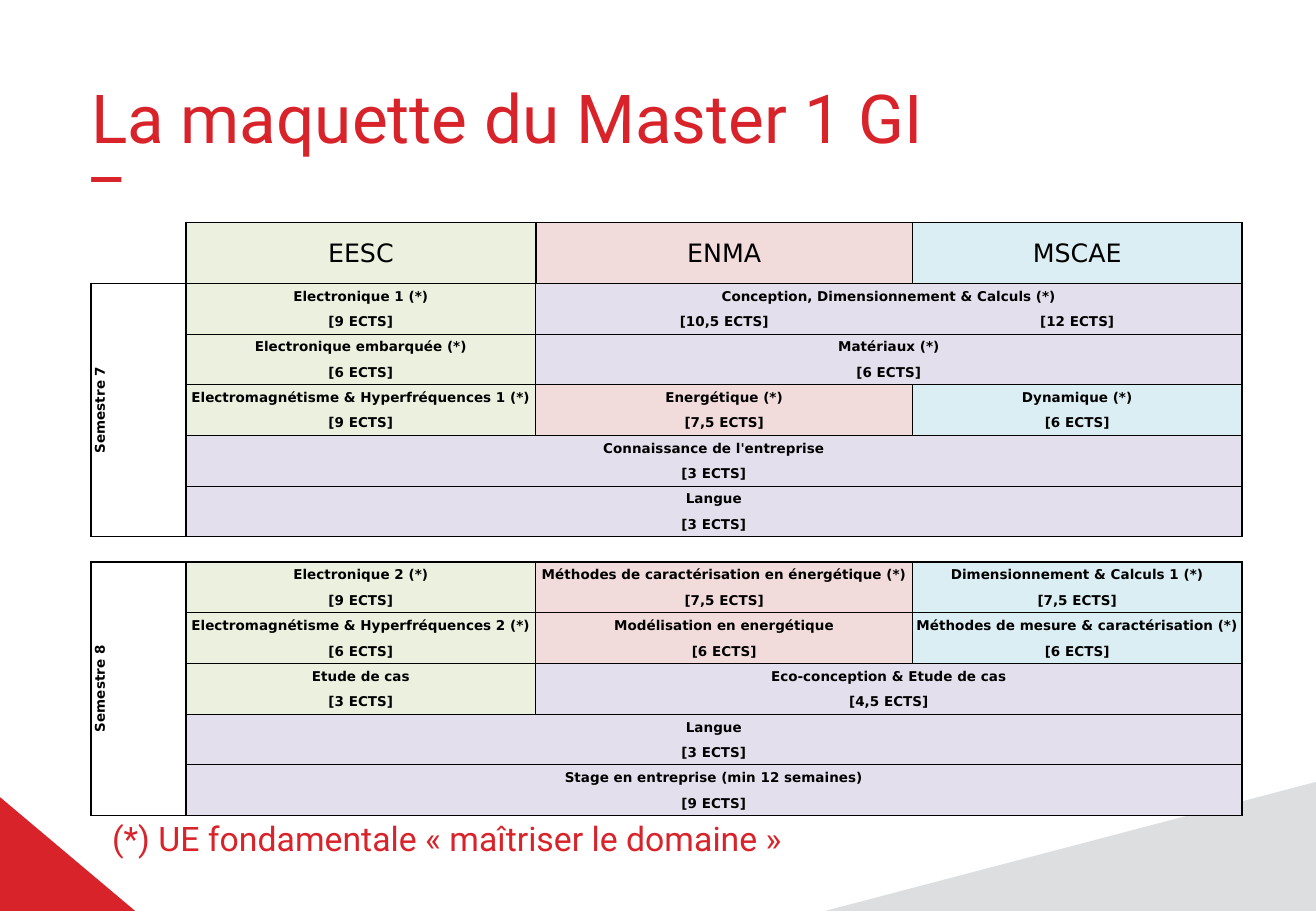
import pptx
import pptx.util
import pptx.dml.color
import pptx.enum.text
import pptx.oxml
import pptx.oxml.ns
import lxml.etree
from collections import defaultdict

Inches, Pt = pptx.util.Inches, pptx.util.Pt
ALIGN = pptx.enum.text.PP_ALIGN
ANCHOR = pptx.enum.text.MSO_ANCHOR

THEME = {
    "red": "D8232A", "grey": "DCDEE0", "black": "000000",
    "columns": {1: "EBF1DE", 2: "F2DCDB", 3: "DAEEF3"}, "shared": "E4DFEC",
    "text_font": "Roboto", "table_font": "DejaVu Sans",
    "title_size": 40, "note_size": 20, "header_size": 15, "cell_size": 8,
    "thick": 1, "thin": 0.5,
}
TITLE = "La maquette du Master 1 GI"
NOTE = "(*) UE fondamentale « maîtriser le domaine »"
TRACKS = ["EESC", "ENMA", "MSCAE"]
SEMESTERS = [
    ("Semestre 7", [
        [("Electronique 1 (*)", ["9"], 1, 1),
         ("Conception, Dimensionnement & Calculs (*)", ["10,5", "12"], 2, 3)],
        [("Electronique embarquée (*)", ["6"], 1, 1), ("Matériaux (*)", ["6"], 2, 3)],
        [("Electromagnétisme & Hyperfréquences 1 (*)", ["9"], 1, 1),
         ("Energétique (*)", ["7,5"], 2, 2), ("Dynamique (*)", ["6"], 3, 3)],
        [("Connaissance de l'entreprise", ["3"], 1, 3)],
        [("Langue", ["3"], 1, 3)],
    ]),
    ("Semestre 8", [
        [("Electronique 2 (*)", ["9"], 1, 1),
         ("Méthodes de caractérisation en énergétique (*)", ["7,5"], 2, 2),
         ("Dimensionnement & Calculs 1 (*)", ["7,5"], 3, 3)],
        [("Electromagnétisme & Hyperfréquences 2 (*)", ["6"], 1, 1),
         ("Modélisation en energétique", ["6"], 2, 2),
         ("Méthodes de mesure & caractérisation (*)", ["6"], 3, 3)],
        [("Etude de cas", ["3"], 1, 1), ("Eco-conception & Etude de cas", ["4,5"], 2, 3)],
        [("Langue", ["3"], 1, 3)],
        [("Stage en entreprise (min 12 semaines)", ["9"], 1, 3)],
    ]),
]
CORNERS = [
    ("red", [(-9.72, 7.54), (1.16, 7.54), (-7.79, 0), (-9.74, 0)]),
    ("grey", [(13.9, 5.63), (2.34, 8.67), (2.3, 9.71), (13.92, 9.71)]),
]
COLUMN_WIDTHS = [0.78, 2.88, 3.1, 2.71]
HEADER_HEIGHTS = [0.25, 0.16]
ROW_COUNT = 23
TABLE_LEFT, TABLE_TOP, TABLE_HEIGHT = 0.75, 1.83, 4.8
STYLE_NO_GRID = "{2D5ABB26-0587-4C30-8999-92F81FD0307C}"


def rgb(value):
    return pptx.dml.color.RGBColor.from_string(value)


def set_all(target, values):
    for name, value in values.items():
        setattr(target, name, value)


def write(p, text, size, font, color, bold=False):
    r = p.add_run()
    r.text = text
    set_all(r.font, {"size": Pt(size), "name": font, "bold": bold})
    r.font.color.rgb = rgb(color)


def set_margins(target, margin, bottom=None):
    set_all(target, {"margin_left": Inches(margin), "margin_right": Inches(margin),
                     "margin_top": Inches(margin),
                     "margin_bottom": Inches(margin if bottom is None else bottom)})


def fill_cell(table, text, top, left, bottom, right, fill=None, size=THEME["cell_size"], bold=True):
    cell = table.cell(top, left)
    if (top, left) != (bottom, right):
        cell.merge(table.cell(bottom, right))
    cell.vertical_anchor = ANCHOR.MIDDLE
    p = cell.text_frame.paragraphs[0]
    p.alignment = ALIGN.CENTER
    write(p, text, size, THEME["table_font"], THEME["black"], bold)
    if fill:
        for row in range(top, bottom + 1):
            for col in range(left, right + 1):
                part = table.cell(row, col)
                part.fill.solid()
                part.fill.fore_color.rgb = rgb(fill)
    return cell


def frame(borders, top, left, bottom, right, width):
    for row in range(top, bottom + 1):
        borders[row, left]["L"] = borders[row, right]["R"] = width
    for col in range(left, right + 1):
        borders[top, col]["T"] = borders[bottom, col]["B"] = width


def draw_borders(table, borders):
    for (row, col), own in list(borders.items()):
        cell = table.cell(row, col)
        sides = dict(own)
        if cell.is_merge_origin:
            far = borders[row + cell.span_height - 1, col + cell.span_width - 1]
            sides.update({side: far[side] for side in "RB" if side in far})
        tc_pr = cell._tc.get_or_add_tcPr()
        for index, side in enumerate("LRTB"):
            width = sides.get(side, 0)
            paint = (f'<a:solidFill><a:srgbClr val="{THEME["black"]}"/></a:solidFill>'
                     if width else "<a:noFill/>")
            tc_pr.insert(index, pptx.oxml.parse_xml(
                f'<a:ln{side} {pptx.oxml.ns.nsdecls("a")} w="{int(Pt(width))}">{paint}</a:ln{side}>'))


def add_corners(s):
    for color, points in CORNERS:
        outline = [(Inches(x), Inches(y)) for x, y in points]
        builder = s.shapes.build_freeform(*outline[0])
        builder.add_line_segments(outline[1:], close=True)
        sp = builder.convert_to_shape()
        sp.shadow.inherit = False
        sp.fill.solid()
        sp.fill.fore_color.rgb = rgb(THEME[color])
        sp.line.fill.background()


def add_title(s):
    sp = s.shapes.title
    set_all(sp, {"left": Inches(0.72), "top": Inches(0.6),
                 "width": Inches(10.11), "height": Inches(1.09)})
    tf = sp.text_frame
    set_margins(tf, 0.03)
    set_all(tf, {"vertical_anchor": ANCHOR.TOP, "word_wrap": True,
                 "auto_size": pptx.enum.text.MSO_AUTO_SIZE.NONE})
    for p, text in ((tf.paragraphs[0], TITLE), (tf.add_paragraph(), "_")):
        set_all(p, {"alignment": ALIGN.LEFT, "space_before": Pt(0), "line_spacing": 1.0})
        write(p, text, THEME["title_size"], THEME["text_font"], THEME["red"])
    tf.paragraphs[1].line_spacing = Pt(19.9)


def add_programme(s):
    table = s.shapes.add_table(
        ROW_COUNT, len(COLUMN_WIDTHS), Inches(TABLE_LEFT), Inches(TABLE_TOP),
        Inches(sum(COLUMN_WIDTHS)), Inches(TABLE_HEIGHT)).table
    set_all(table, {"first_row": False, "horz_banding": False})
    table._tbl.tblPr.find(pptx.oxml.ns.qn("a:tableStyleId")).text = STYLE_NO_GRID
    for column, width in zip(table.columns, COLUMN_WIDTHS):
        column.width = Inches(width)
    body_rows = ROW_COUNT - len(HEADER_HEIGHTS)
    body_height = (TABLE_HEIGHT - sum(HEADER_HEIGHTS)) / body_rows
    for row, height in zip(table.rows, HEADER_HEIGHTS + [body_height] * body_rows):
        row.height = Inches(height)
    for cell in table.iter_cells():
        set_margins(cell, 0.01, 0)

    borders = defaultdict(dict)
    for col, track in enumerate(TRACKS, 1):
        fill_cell(table, track, 0, col, 1, col, THEME["columns"][col], THEME["header_size"], False)
        frame(borders, 0, col, 1, col, THEME["thick"])
    top = len(HEADER_HEIGHTS)
    for semester, lines in SEMESTERS:
        bottom = top + 2 * len(lines) - 1
        label = fill_cell(table, semester, top, 0, bottom, 0)
        label._tc.get_or_add_tcPr().set("vert", "vert270")
        for number, units in enumerate(lines):
            row = top + 2 * number
            for name, credits, left, right in units:
                fill = THEME["columns"][left] if left == right else THEME["shared"]
                fill_cell(table, name, row, left, row, right, fill)
                for offset, credit in enumerate(credits):
                    last = right if len(credits) == 1 else left + offset
                    fill_cell(table, f"[{credit} ECTS]", row + 1, left + offset, row + 1, last, fill)
                frame(borders, row, left, row + 1, right, THEME["thin"])
        frame(borders, top, 0, bottom, 0, THEME["thick"])
        frame(borders, top, 1, bottom, len(TRACKS), THEME["thick"])
        top = bottom + 2

    for cell in table.iter_cells():
        if not cell.text_frame.text:
            end = lxml.etree.SubElement(cell.text_frame.paragraphs[0]._p,
                                        pptx.oxml.ns.qn("a:endParaRPr"))
            end.set("sz", str(THEME["cell_size"] * 100))
    draw_borders(table, borders)


def add_note(s):
    sp = s.shapes.add_textbox(Inches(0.75), Inches(6.67), Inches(5.86), Inches(0.45))
    tf = sp.text_frame
    set_margins(tf, 0.06)
    set_all(tf, {"vertical_anchor": ANCHOR.MIDDLE, "word_wrap": False})
    p = tf.paragraphs[0]
    p.alignment = ALIGN.CENTER
    write(p, NOTE, THEME["note_size"], THEME["text_font"], THEME["red"])


def main():
    prs = pptx.Presentation()
    set_all(prs, {"slide_width": Inches(10.83), "slide_height": Inches(7.5)})
    s = prs.slides.add_slide(prs.slide_layouts[5])
    add_corners(s)
    add_title(s)
    add_programme(s)
    add_note(s)
    prs.save("out.pptx")


if __name__ == "__main__":
    main()
